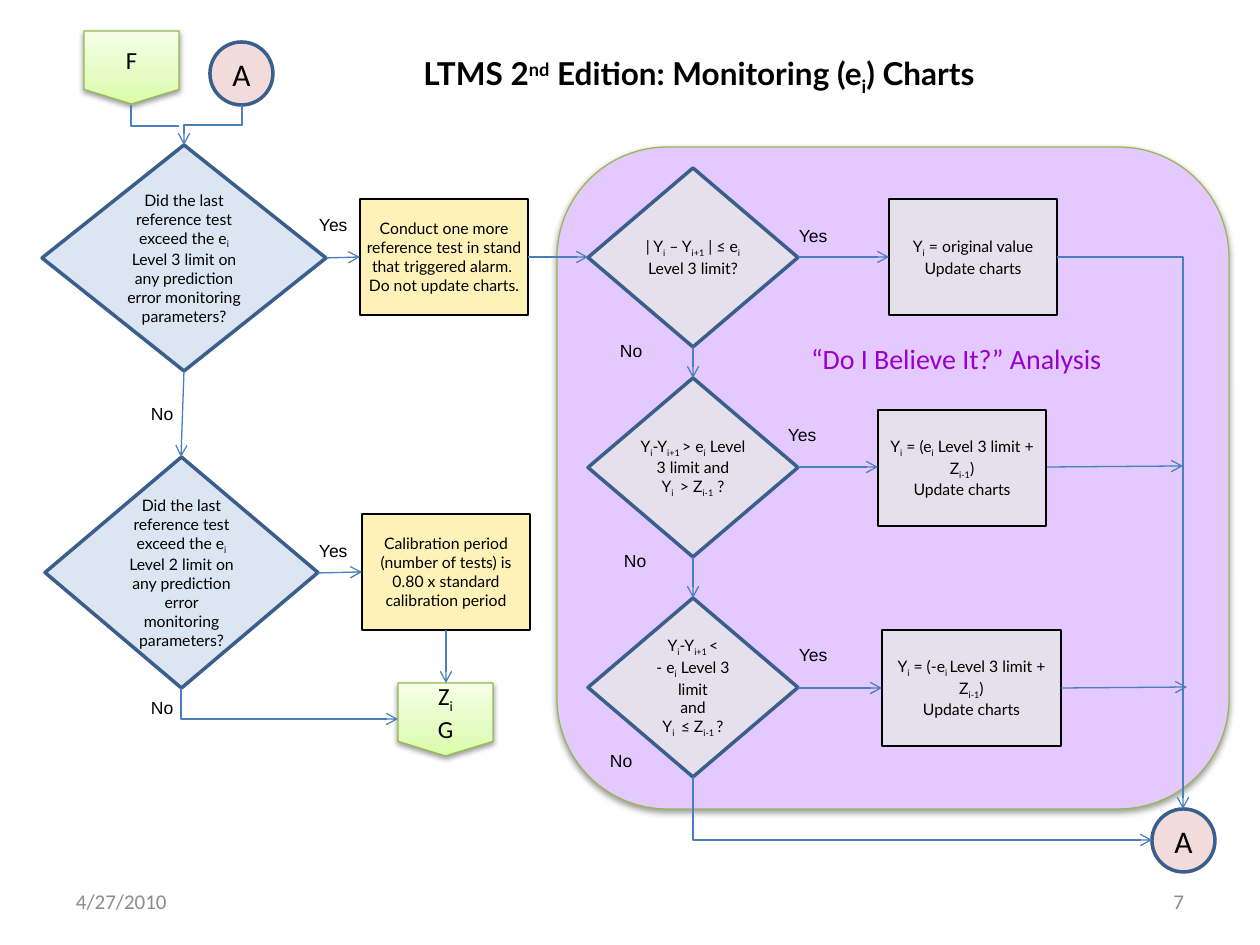
from copy import deepcopy
from dataclasses import dataclass
from typing import Optional

from lxml.etree import SubElement
from pptx import Presentation
from pptx.dml.color import RGBColor
from pptx.enum.shapes import MSO_CONNECTOR as Conn, MSO_SHAPE as Shape
from pptx.enum.text import MSO_ANCHOR as Anchor, PP_ALIGN as Align
from pptx.oxml.ns import qn
from pptx.util import Emu, Pt

EMU_PER_PX = 914400 / 126
COLORS = {
    "black": "000000", "white": "FFFFFF", "gray": "8C8C8C", "purple": "9900CC",
    "panel": "E4C9FF", "green": "98B955", "yellow": "FFF2B9", "blue": "DCE6F2",
    "navy": "3A5F8C", "lilac": "E6E0EC", "pink": "F2DCDB", "arrow": "4B7EBC",
}
GREEN_STOPS = [(0, "DAFDA7"), (0.35, "E4FCC2"), (1, "F5FFE7")]


@dataclass(frozen=True)
class Style:
    """Look of a shape; a fill of None means the green gradient."""
    shape: Shape
    fill: Optional[str]
    line: Optional[str] = None
    width: float = 0.75
    font: str = "Lato"
    size: int = 9
    inset: tuple[int, int] = (13, 6)
    bold: bool = False
    shadow: bool = False


PANEL = Style(Shape.ROUNDED_RECTANGLE, "panel", "green", shadow=True)
TITLE = Style(Shape.RECTANGLE, "white", size=18, inset=(6, 5), bold=True)
QUESTION = Style(Shape.FLOWCHART_DECISION, "blue", "navy", 2)
CHECK = Style(Shape.FLOWCHART_DECISION, "lilac", "navy", 2, inset=(0, 0))
ACTION = Style(Shape.FLOWCHART_PROCESS, "yellow", "black", inset=(4, 3))
RESULT = Style(Shape.FLOWCHART_PROCESS, "lilac", "black", inset=(4, 3))
JOINT = Style(Shape.FLOWCHART_CONNECTOR, "pink", "navy", 2, "Calibri", 18)
OFFPAGE = Style(Shape.FLOWCHART_OFFPAGE_CONNECTOR, None, "green",
                font="Calibri", size=14, shadow=True)


@dataclass(frozen=True)
class Node:
    style: Style
    x: int
    y: int
    w: int
    h: int
    text: str = ""


@dataclass(frozen=True)
class Note:
    text: str
    x: int
    y: int
    w: int = 50
    h: int = 25
    font: str = "Arial"
    size: int = 10
    color: str = "black"
    inset: tuple[int, int, int, int] = (4, 4, 0, 0)
    align: Align = Align.LEFT
    anchor: Anchor = Anchor.TOP


# In node text, ~i~ is a subscript and ~^nd~ a superscript.
NODES = [
    Node(PANEL, 557, 147, 672, 662),
    Node(TITLE, 368, 25, 662, 101, "LTMS 2~^nd~ Edition: Monitoring (e~i~) Charts"),
    *[Node(QUESTION, *box, "Did the last reference test exceed the e~i~ "
           f"Level {level} limit on any prediction error monitoring parameters?")
      for level, box in ((3, (42, 145, 284, 226)), (2, (45, 457, 273, 231)))],
    Node(ACTION, 360, 199, 168, 116, "Conduct one more reference test in stand "
         "that triggered alarm.  Do not update charts."),
    Node(ACTION, 362, 514, 168, 116, "Calibration period (number of tests) is "
         "0.80 x standard calibration period"),
    Node(CHECK, 588, 168, 210, 179, "| Y~i~ – Y~i+1~ | ≤ e~i~ Level 3 limit?"),
    Node(CHECK, 588, 378, 210, 179,
         "Y~i~-Y~i+1 ~> e~i~ Level 3 limit and\nY~i ~ > Z~i-1~ ?"),
    Node(CHECK, 588, 598, 210, 179,
         "Y~i~-Y~i+1 ~<\n- e~i~ Level 3 limit\nand\nY~i ~ ≤ Z~i-1 ~?"),
    Node(RESULT, 889, 199, 168, 116, "Y~i~ = original value\nUpdate charts"),
    Node(RESULT, 878, 410, 168, 116,
         "Y~i~ = (e~i~ Level 3 limit + Z~i-1~)\nUpdate charts"),
    Node(RESULT, 882, 630, 179, 116,
         "Y~i~ = (-e~i ~Level 3 limit + Z~i-1~)\nUpdate charts"),
    Node(JOINT, 210, 42, 63, 63, "A"),
    Node(JOINT, 1152, 809, 63, 63, "A"),
    Node(OFFPAGE, 84, 31, 95, 73, "F"),
    Node(OFFPAGE, 398, 683, 95, 73, "Z~i~\nG"),
]
FOOTER = dict(y=876, w=294, h=50, font="Calibri", size=12, color="gray",
              inset=(13, 6, 13, 6), anchor=Anchor.MIDDLE)
NOTES = [
    *[Note("Yes", x, y) for x, y in
      ((315, 210), (315, 536), (795, 221), (784, 420), (795, 640))],
    *[Note("No", x, y) for x, y in
      ((147, 399), (147, 693), (616, 336), (620, 546), (606, 746))],
    Note("“Do I Believe It?” Analysis", 798, 336, 357, 47, "Calibri", 16,
         "purple", (13, 6, 13, 6)),
    Note("4/27/2010", 63, **FOOTER),
    Note("7", 903, align=Align.RIGHT, **FOOTER),
]
ARROWS = [
    (184, 371, 181, 457), (326, 258, 360, 257), (528, 257, 588, 257),
    (798, 257, 889, 257), (693, 347, 693, 378), (693, 557, 693, 598),
    (798, 467, 878, 467), (798, 688, 882, 688), (318, 573, 362, 572),
    (1047, 467, 1183, 466), (1061, 688, 1187, 687), (446, 630, 446, 683),
]


def px(value: float) -> Emu:
    return Emu(round(value * EMU_PER_PX))


def rgb(name: str) -> RGBColor:
    return RGBColor.from_string(COLORS[name])


def set_font(p, name: str, size: int, color: str, bold: bool = False) -> None:
    p.font.name, p.font.size, p.font.bold = name, Pt(size), bold
    p.font.color.rgb = rgb(color)


def set_insets(tf, left: int, top: int, right: int, bottom: int) -> None:
    tf.margin_left, tf.margin_top = px(left), px(top)
    tf.margin_right, tf.margin_bottom = px(right), px(bottom)
    tf.word_wrap = True


def add_scripted_runs(p, text: str) -> None:
    for i, part in enumerate(text.split("~")):
        if part:
            r = p.add_run()
            r.text = part.lstrip("^")
            if i % 2:
                raised = part.startswith("^")
                r.font._element.set("baseline", "30000" if raised else "-25000")


def fill_green(sp) -> None:
    sp.fill.gradient()
    sp.fill.gradient_angle = 90
    stops = sp._element.spPr.find(qn("a:gradFill")).find(qn("a:gsLst"))
    stops.insert(1, deepcopy(stops[0]))
    for stop, (position, color) in zip(sp.fill.gradient_stops, GREEN_STOPS):
        stop.position = position
        stop.color.rgb = RGBColor.from_string(color)


def add_shadow(sp) -> None:
    effects = sp._element.spPr.find(qn("a:effectLst"))
    shadow = SubElement(effects, qn("a:outerShdw"), blurRad="40000", dist="20000",
                        dir="5400000", rotWithShape="0")
    color = SubElement(shadow, qn("a:srgbClr"), val=COLORS["black"])
    SubElement(color, qn("a:alpha"), val="38000")


def add_node(s, node: Node) -> None:
    style = node.style
    sp = s.shapes.add_shape(style.shape, *map(px, (node.x, node.y, node.w, node.h)))
    sp.shadow.inherit = False
    if style.fill:
        sp.fill.solid()
        sp.fill.fore_color.rgb = rgb(style.fill)
    else:
        fill_green(sp)
    if style.line:
        sp.line.color.rgb, sp.line.width = rgb(style.line), Pt(style.width)
    else:
        sp.line.fill.background()
    if style.shadow:
        add_shadow(sp)
    tf = sp.text_frame
    set_insets(tf, *style.inset * 2)
    tf.vertical_anchor = Anchor.MIDDLE
    for i, line in enumerate(node.text.split("\n")):
        p = tf.add_paragraph() if i else tf.paragraphs[0]
        p.alignment = Align.CENTER
        set_font(p, style.font, style.size, "black", style.bold)
        add_scripted_runs(p, line)


def add_note(s, note: Note) -> None:
    tf = s.shapes.add_textbox(*map(px, (note.x, note.y, note.w, note.h))).text_frame
    set_insets(tf, *note.inset)
    tf.vertical_anchor = note.anchor
    p = tf.paragraphs[0]
    p.text, p.alignment = note.text, note.align
    set_font(p, note.font, note.size, note.color)


def add_arrow(s, x1: float, y1: float, x2: float, y2: float,
              kind: Conn = Conn.STRAIGHT, head: bool = True):
    c = s.shapes.add_connector(kind, *map(px, (x1, y1, x2, y2)))
    c.line.color.rgb, c.line.width = rgb("arrow"), Pt(0.75)
    if head:
        SubElement(c.line._get_or_add_ln(), qn("a:tailEnd"), type="arrow")
    SubElement(c._element.spPr, qn("a:effectLst"))
    return c


def add_elbow(s, x1: int, y1: int, x2: int, y2: int, bends: int = 1,
              down_first: bool = True, head: bool = True) -> None:
    """Draw a bent arrow; one that leaves downwards is a turned connector."""
    box = (x1, y1, x2, y2)
    if down_first:
        cx, cy = (x1 + x2) / 2, (y1 + y2) / 2
        half_w, half_h = abs(y2 - y1) / 2, abs(x2 - x1) / 2
        box = (cx - half_w, cy - half_h, cx + half_w, cy + half_h)
    c = add_arrow(s, *box, Conn.ELBOW, head)
    spPr = c._element.spPr
    spPr.find(qn("a:prstGeom")).set("prst", f"bentConnector{bends + 1}")
    if down_first:
        xfrm = spPr.find(qn("a:xfrm"))
        xfrm.set("rot", "16200000" if x2 > x1 else "5400000")
        if x2 > x1:
            xfrm.set("flipH", "1")


def main() -> None:
    prs = Presentation()
    prs.slide_width, prs.slide_height = px(1260), px(945)
    s = prs.slides.add_slide(prs.slide_layouts[6])
    for node in NODES:
        add_node(s, node)
    for note in NOTES:
        add_note(s, note)
    for arrow in ARROWS:
        add_arrow(s, *arrow)
    add_elbow(s, 1057, 257, 1183, 809, down_first=False)
    add_elbow(s, 693, 777, 1152, 840)
    add_elbow(s, 181, 688, 398, 719)
    add_elbow(s, 242, 105, 184, 145, bends=2)
    add_elbow(s, 131, 105, 179, 126, head=False)
    prs.save("out.pptx")


if __name__ == "__main__":
    main()
